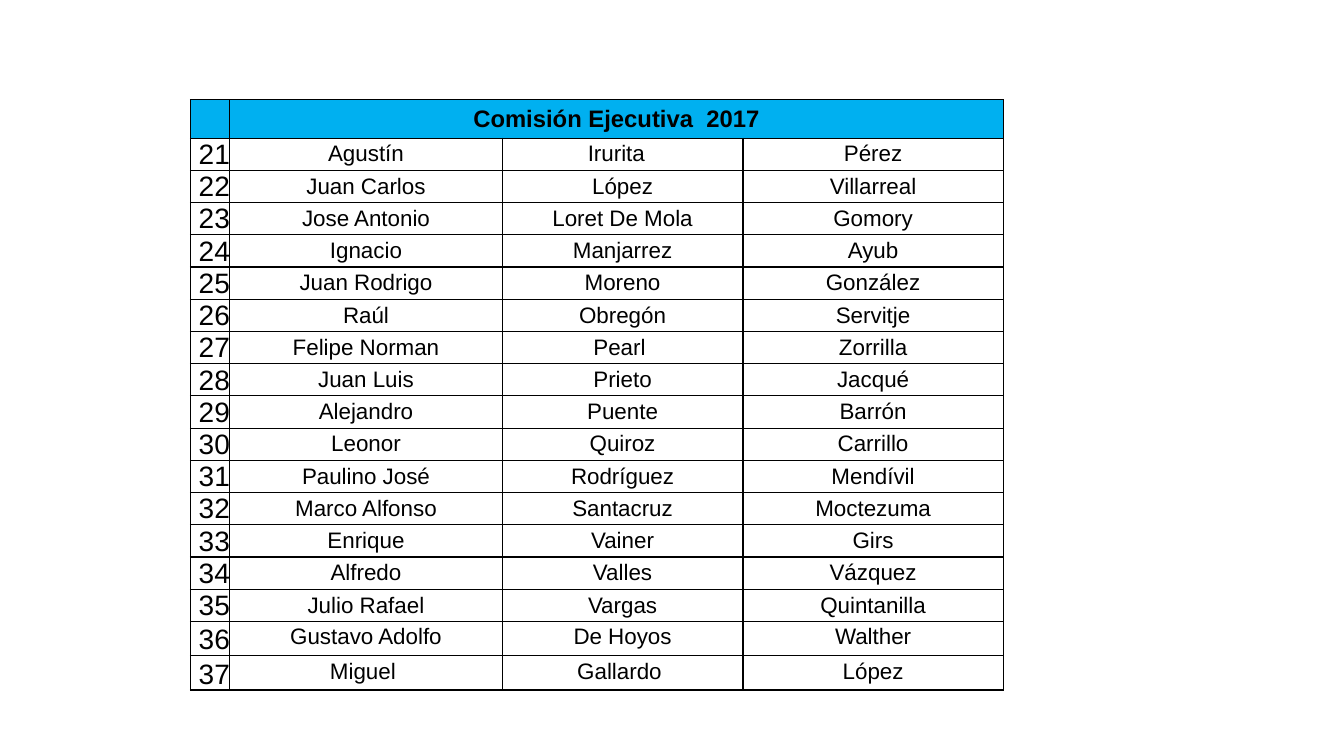
from dataclasses import dataclass

from lxml import etree
from pptx import Presentation
from pptx import util as u
from pptx.dml.color import RGBColor
from pptx.enum import text
from pptx.oxml import ns

MEMBERS = [
    ("Agustín", "Irurita  ", "Pérez"),
    ("Juan Carlos", "López", "Villarreal"),
    ("Jose Antonio", "Loret De Mola", "Gomory"),
    ("Ignacio", "Manjarrez", "Ayub"),
    ("Juan Rodrigo", "Moreno", "González"),
    ("Raúl", "Obregón", "Servitje"),
    ("Felipe Norman", "Pearl ", "Zorrilla"),
    ("Juan Luis", "Prieto", "Jacqué"),
    ("Alejandro", "Puente", "Barrón"),
    ("Leonor", "Quiroz", "Carrillo"),
    ("Paulino José", "Rodríguez", "Mendívil"),
    ("Marco Alfonso", "Santacruz", "Moctezuma"),
    ("Enrique", "Vainer", "Girs"),
    ("Alfredo", "Valles", "Vázquez"),
    ("Julio Rafael", "Vargas", "Quintanilla"),
    ("Gustavo Adolfo", "De Hoyos", "Walther"),
    ("Miguel ", "Gallardo ", "López"),
]
FIRST_NUMBER = 21
PADDED_ROWS = 2
COLUMN_WIDTHS = [0.39, 2.7, 2.39, 2.58]
ROW_HEIGHTS = [0.38] + [0.32] * (len(MEMBERS) - PADDED_ROWS) + [0.34] * PADDED_ROWS


@dataclass(frozen=True)
class Theme:
    font: str = "Arial"
    ink: str = "000000"
    header: str = "00B0F0"
    paper: str = "FFFFFF"
    title_size: int = 17
    number_size: int = 20
    name_size: int = 16
    border_width: int = 1


def set_all(target, values):
    for name, value in values.items():
        setattr(target, name, value)


class SlideBuilder:
    def __init__(self, slide, theme):
        self.slide = slide
        self.theme = theme

    def table(self, left, top, widths, heights):
        frame = self.slide.shapes.add_table(
            len(heights), len(widths), u.Inches(left), u.Inches(top),
            u.Inches(sum(widths)), u.Inches(sum(heights)))
        table = frame.table
        for column, width in zip(table.columns, widths):
            column.width = u.Inches(width)
        for row, height in zip(table.rows, heights):
            row.height = u.Inches(height)
        return table

    def borders(self, cell):
        properties = cell._tc.get_or_add_tcPr()
        for position, side in enumerate(("lnL", "lnR", "lnT", "lnB")):
            line = etree.Element(ns.qn(f"a:{side}"), w=str(u.Pt(self.theme.border_width)))
            fill = etree.SubElement(line, ns.qn("a:solidFill"))
            etree.SubElement(fill, ns.qn("a:srgbClr"), val=self.theme.ink)
            properties.insert(position, line)

    def cell(self, cell, words, size, fill, bold=False, padding=0,
             align=text.PP_ALIGN.CENTER, anchor=text.MSO_ANCHOR.MIDDLE):
        set_all(cell, {
            "text": words,
            "vertical_anchor": anchor,
            "margin_left": u.Inches(padding),
            "margin_right": u.Inches(padding),
            "margin_top": 0,
            "margin_bottom": u.Inches(padding),
        })
        cell.fill.solid()
        cell.fill.fore_color.rgb = RGBColor.from_string(fill)
        paragraph = cell.text_frame.paragraphs[0]
        paragraph.alignment = align
        set_all(paragraph.font, {"name": self.theme.font, "size": u.Pt(size), "bold": bold})
        paragraph.font.color.rgb = RGBColor.from_string(self.theme.ink)
        self.borders(cell)

    def committee(self):
        theme = self.theme
        table = self.table(1.89, 0.99, COLUMN_WIDTHS, ROW_HEIGHTS)
        titles = ("", "Comisión Ejecutiva  2017", "", "")
        for column, title in enumerate(titles):
            self.cell(table.cell(0, column), title, theme.title_size, theme.header, bold=True)
        table.cell(0, 1).merge(table.cell(0, 3))
        for row, names in enumerate(MEMBERS, 1):
            self.cell(table.cell(row, 0), str(FIRST_NUMBER + row - 1), theme.number_size,
                      theme.paper, align=text.PP_ALIGN.RIGHT, anchor=text.MSO_ANCHOR.BOTTOM)
            padding = 0.03 if row > len(MEMBERS) - PADDED_ROWS else 0
            for column, name in enumerate(names, 1):
                self.cell(table.cell(row, column), name, theme.name_size, theme.paper,
                          padding=padding)


def main():
    presentation = Presentation()
    set_all(presentation, {"slide_width": u.Inches(13.33), "slide_height": u.Inches(7.5)})
    slide = presentation.slides.add_slide(presentation.slide_layouts[6])
    SlideBuilder(slide, Theme()).committee()
    presentation.save("out.pptx")


if __name__ == "__main__":
    main()
